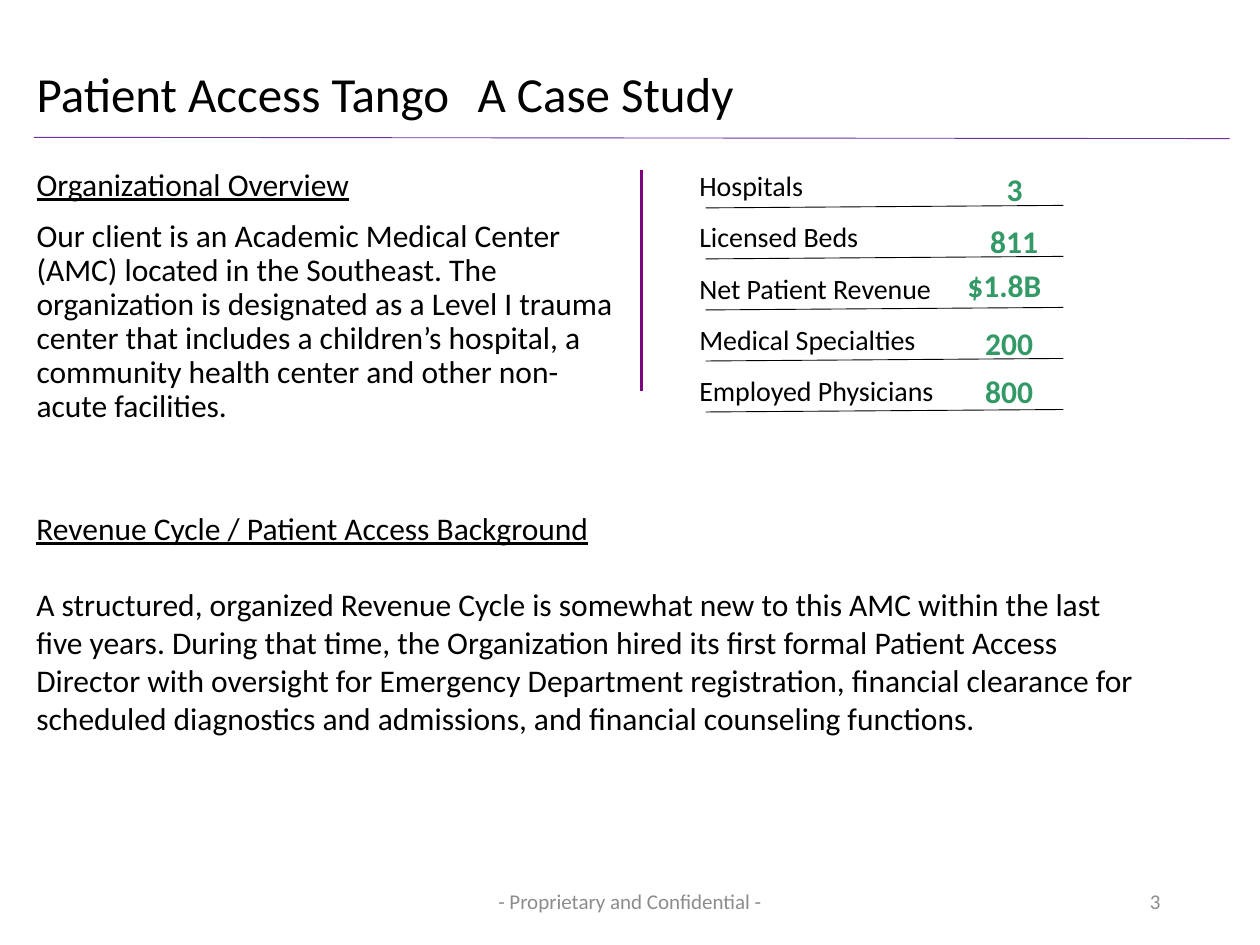
from lxml import etree
from pptx import Presentation
from pptx.dml.color import RGBColor
from pptx.enum import shapes, text
from pptx.oxml import ns
from pptx.util import Inches, Pt

COLORS = {"text": "000000", "muted": "8C8C8C", "figure": "339966",
          "rule": "7030A0", "divider": "800080"}
FONT = "Calibri"

TITLE = "Patient Access Tango\tA Case Study"
TITLE_TAB = 9.43
OVERVIEW = ("Organizational Overview",
            "Our client is an Academic Medical Center (AMC) located in the Southeast. "
            "The organization is designated as a Level I trauma center that includes "
            "a children’s hospital, a community health center and other non-acute "
            "facilities.")
BACKGROUND = ("Revenue Cycle / Patient Access Background",
              "A structured, organized Revenue Cycle is somewhat new to this AMC within "
              "the last five years. During that time, the Organization hired its first "
              "formal Patient Access Director with oversight for Emergency Department "
              "registration, financial clearance for scheduled diagnostics and "
              "admissions, and financial counseling functions.")
# label, figure, figure box (left, top, width)
FACTS = [("Hospitals", "3", (7.89, 1.3, 0.33)),
         ("Licensed Beds", "811", (7.76, 1.71, 0.59)),
         ("Net Patient Revenue", "$1.8B", (7.58, 2.06, 0.97)),
         ("Medical Specialties", "200", (7.72, 2.52, 0.59)),
         ("Employed Physicians", "800", (7.72, 2.9, 0.59))]
FACT_RULE_TOP, FACT_RULE_STEP = 1.64, 0.405
FOOTERS = [("- Proprietary and Confidential -", (3.31, 6.95, 3.38, 0.4), text.PP_ALIGN.CENTER),
           ("3", (7.06, 6.95, 2.25, 0.4), text.PP_ALIGN.RIGHT)]


def place(sp, box, anchor=text.MSO_ANCHOR.TOP):
    sp.left, sp.top, sp.width, sp.height = map(Inches, box)
    tf = sp.text_frame
    tf.word_wrap = True
    tf.auto_size = text.MSO_AUTO_SIZE.NONE
    tf.vertical_anchor = anchor
    return tf


def add_textbox(s, box, anchor=text.MSO_ANCHOR.TOP):
    return place(s.shapes.add_textbox(*map(Inches, box)), box, anchor)


def write(tf, lines, size, color="text", bold=None, underline_first=False,
          gap=0, spacing=1.0, align=text.PP_ALIGN.LEFT):
    """Fill a frame with unbulleted paragraphs, gap points apart."""
    for i, line in enumerate(lines):
        p = tf.add_paragraph() if i else tf.paragraphs[0]
        pPr = p._p.get_or_add_pPr()
        pPr.set("marL", "0")
        pPr.set("indent", "0")
        etree.SubElement(pPr, ns.qn("a:buNone"))
        p.alignment, p.line_spacing = align, spacing
        p.space_before = Pt(gap if i else 0)
        r = p.add_run()
        r.text = line
        f = r.font
        f.name, f.size, f.bold = FONT, Pt(size), bold
        f.underline = True if underline_first and i == 0 else None
        f.color.rgb = RGBColor.from_string(COLORS[color])


def add_line(s, start, end, color, width):
    line = s.shapes.add_connector(shapes.MSO_CONNECTOR.STRAIGHT,
                                  *map(Inches, start + end))
    line.line.color.rgb = RGBColor.from_string(COLORS[color])
    line.line.width = Pt(width)
    etree.SubElement(line._element.spPr, ns.qn("a:effectLst"))


def add_right_tab(p, position):
    tabs = etree.SubElement(p._p.get_or_add_pPr(), ns.qn("a:tabLst"))
    etree.SubElement(tabs, ns.qn("a:tab"), pos=str(Inches(position)), algn="r")


def main():
    prs = Presentation()
    prs.slide_width, prs.slide_height = Inches(10), Inches(7.5)
    s = prs.slides.add_slide(prs.slide_layouts.get_by_name("Two Content"))
    title, overview, facts = s.placeholders

    add_line(s, (0.27, 1.09), (9.76, 1.1), "rule", 0.5)
    tf = place(title, (0.19, 0.15, 9.64, 1.23), text.MSO_ANCHOR.MIDDLE)
    write(tf, [TITLE], 28, spacing=0.9)
    add_right_tab(tf.paragraphs[0], TITLE_TAB)

    write(place(overview, (0.19, 1.29, 4.9, 2.07)), OVERVIEW, 18,
          underline_first=True, gap=10, spacing=0.9)
    write(add_textbox(s, (0.19, 3.99, 9.02, 2.49)), BACKGROUND, 18,
          underline_first=True, gap=22)
    add_line(s, (5.09, 1.35), (5.09, 3.1), "divider", 1.5)

    write(place(facts, (5.45, 1.29, 3.62, 2.46)), [label for label, *_ in FACTS],
          16, gap=10)
    for i, (_, figure, (left, top, width)) in enumerate(FACTS):
        y = FACT_RULE_TOP + i * FACT_RULE_STEP
        add_line(s, (8.44, y - 0.01), (5.6, y + 0.01), "text", 0.5)
        write(add_textbox(s, (left, top, width, 0.4)), [figure], 18, "figure", bold=True)

    for line, box, align in FOOTERS:
        write(add_textbox(s, box, text.MSO_ANCHOR.MIDDLE), [line], 12, "muted", align=align)
    prs.save("out.pptx")


if __name__ == "__main__":
    main()
